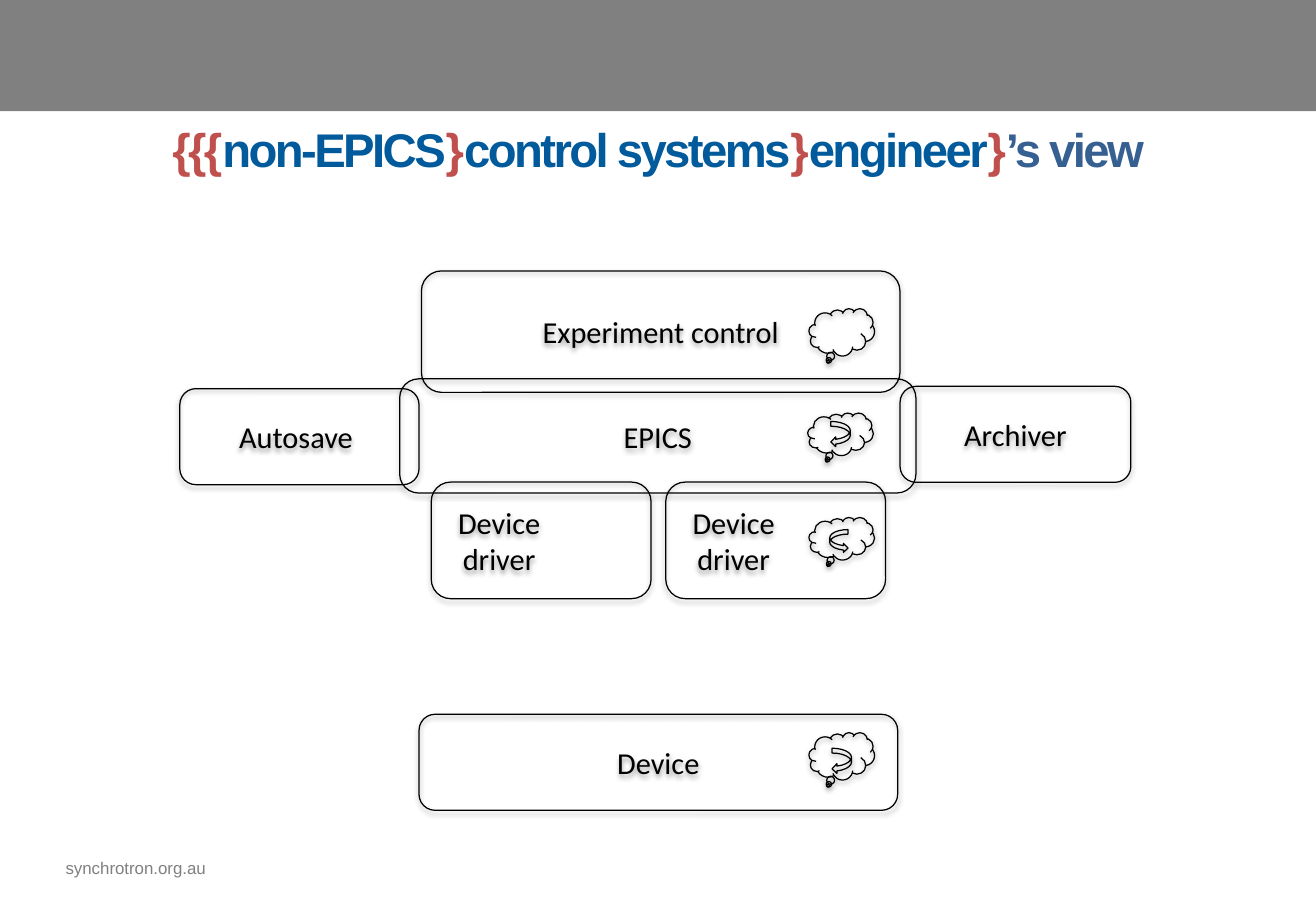
import pptx
import pptx.util
import pptx.dml.color
import pptx.enum.shapes
import pptx.enum.text
import pptx.oxml.ns
import lxml.etree

Pt = pptx.util.Pt
SHAPE = pptx.enum.shapes.MSO_SHAPE
ALIGN = pptx.enum.text.PP_ALIGN
ANCHOR = pptx.enum.text.MSO_ANCHOR

COLORS = {
    "banner": "808080",
    "ink": "000000",
    "brace": "C0504D",
    "term": "005A9B",
    "view": "376092",
}
LABEL_FONT = {"name": "Calibri", "size": Pt(18)}
TITLE_FONT = {"name": "Arial", "size": Pt(28), "bold": True}
FOOTER_FONT = {"name": "Arial", "size": Pt(10)}

PAGE_WIDTH = 780
DRIVER_LEFT, DRIVER_PITCH = 255.6, 139
CLOUD_WIDTH = 38.9

TITLE = [
    ("{{{", "brace"),
    ("non-EPICS", "term"),
    ("}", "brace"),
    ("control systems", "term"),
    ("}", "brace"),
    ("engineer", "term"),
    ("}", "brace"),
    ("’s view", "view"),
]
LAYERS = [
    ("EPICS", 236.9, 224.6, 306, 67.7),
    ("Device", 248.4, 423.4, 283.7, 56.9),
    ("Autosave ", 106.6, 230.4, 141.8, 56.9),
    ("Archiver", 533.5, 229, 136.8, 56.9),
    ("Experiment control", 249.8, 160.6, 283.7, 72),
]
CLOUDS = [
    (479.5, 182.9, 28.1),
    (479.5, 434.2, 28.1),
    (479.5, 306.7, 25.2),
    (478.8, 244.8, 25.2),
]
ARROWS = [
    (SHAPE.CURVED_LEFT_ARROW, 493.2, 443.5, 11.5, 15.1),
    (SHAPE.CURVED_RIGHT_ARROW, 491.8, 313.9, 10.8, 13.7),
    (SHAPE.CURVED_LEFT_ARROW, 492.5, 249.8, 11.5, 15.1),
]


def color(name):
    return pptx.dml.color.RGBColor.from_string(COLORS[name])


def apply(target, values):
    for name, value in values.items():
        setattr(target, name, value)


def add_span(para, text, font, color_name):
    span = para.add_run()
    span.text = text
    apply(span.font, font)
    span.font.color.rgb = color(color_name)
    return span


def add_shadow(shape, opacity, distance):
    effects = shape._element.spPr.find(pptx.oxml.ns.qn("a:effectLst"))
    shadow = lxml.etree.SubElement(
        effects, pptx.oxml.ns.qn("a:outerShdw"),
        blurRad=str(Pt(3.1)), dist=str(Pt(distance)), dir="5400000", rotWithShape="0")
    tint = lxml.etree.SubElement(
        shadow, pptx.oxml.ns.qn("a:srgbClr"), val=COLORS["ink"])
    lxml.etree.SubElement(
        tint, pptx.oxml.ns.qn("a:alpha"), val=str(opacity * 1000))


def add_outline(page, kind, left, top, width, height, opacity=38, distance=1.6):
    shape = page.shapes.add_shape(kind, Pt(left), Pt(top), Pt(width), Pt(height))
    shape.fill.background()
    shape.line.color.rgb = color("ink")
    shape.line.width = Pt(0.75)
    shape.shadow.inherit = False
    add_shadow(shape, opacity, distance)
    return shape


def add_layer(page, label, left, top, width, height, right_inset=7.2):
    box = add_outline(page, SHAPE.ROUNDED_RECTANGLE, left, top, width, height)
    apply(box.text_frame, {
        "word_wrap": True,
        "vertical_anchor": ANCHOR.MIDDLE,
        "margin_right": Pt(right_inset),
    })
    para = box.text_frame.paragraphs[0]
    para.alignment = ALIGN.CENTER
    add_span(para, label, LABEL_FONT, "ink")


def add_banner(page):
    banner = page.shapes.add_shape(
        SHAPE.RECTANGLE, Pt(0), Pt(0), Pt(PAGE_WIDTH), Pt(66))
    banner.shadow.inherit = False
    banner.fill.solid()
    banner.fill.fore_color.rgb = color("banner")
    banner.line.fill.background()


def add_text(page, spans, font, left, top, width, height, frame, align, spacing=0):
    box = page.shapes.add_textbox(Pt(left), Pt(top), Pt(width), Pt(height))
    apply(box.text_frame, {"word_wrap": True, **frame})
    para = box.text_frame.paragraphs[0]
    para.alignment = align
    for text, color_name in spans:
        span = add_span(para, text, font, color_name)
        if spacing:
            span._r.get_or_add_rPr().set("spc", str(spacing))


def main():
    deck = pptx.Presentation()
    apply(deck, {"slide_width": Pt(PAGE_WIDTH), "slide_height": Pt(540)})
    page = deck.slides.add_slide(deck.slide_layouts[6])

    add_banner(page)
    add_text(page, [("synchrotron.org.au", "banner")], FOOTER_FONT,
             38.9, 504.7, 147.6, 19.4, {"margin_left": Pt(0)}, ALIGN.LEFT)
    for layer in LAYERS:
        add_layer(page, *layer)
    for column in range(2):
        add_layer(page, "Device driver", DRIVER_LEFT + column * DRIVER_PITCH,
                  285.8, 130.3, 69.1, right_inset=56.9)
    for left, top, height in CLOUDS:
        add_outline(page, SHAPE.CLOUD_CALLOUT, left, top, CLOUD_WIDTH, height)
    for arrow in ARROWS:
        add_outline(page, *arrow, opacity=35, distance=1.8)
    add_text(page, TITLE, TITLE_FONT, 0, 65.5, PAGE_WIDTH, 67.7,
             {"margin_top": Pt(6)}, ALIGN.CENTER, spacing=-150)

    deck.save("out.pptx")


if __name__ == "__main__":
    main()
